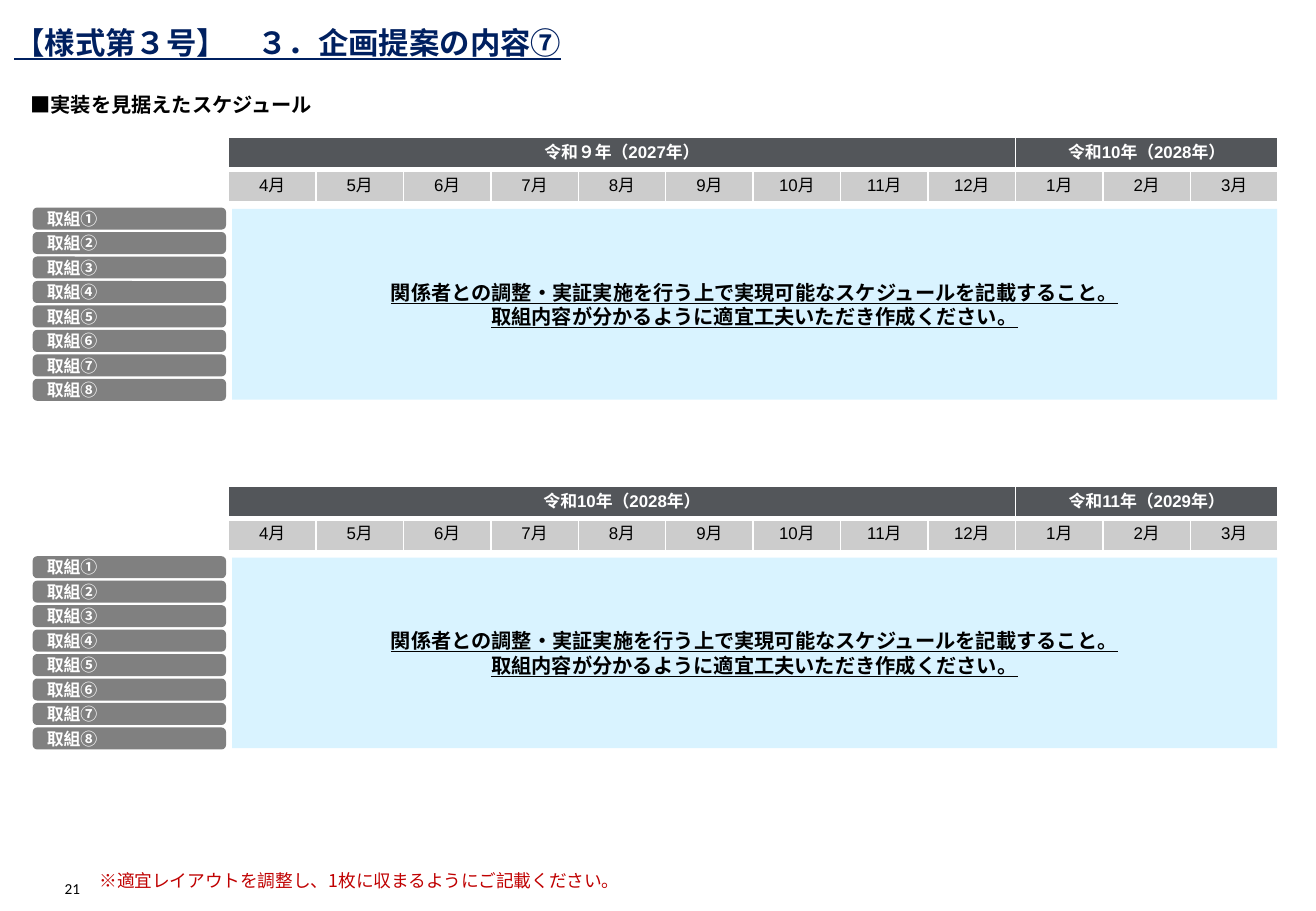
from lxml import etree
from pptx import Presentation, util as u
from pptx.dml.color import RGBColor
from pptx.enum import shapes, text
from pptx.oxml import ns

GOTHIC = "Noto Sans CJK JP"
LATIN = "Arial"
WHITE, BLACK, NAVY, RED = "FFFFFF", "000000", "002060", "C00000"
HEADER, MONTH, PLAN, TASK = "53565A", "CCCCCC", "D9F3FF", "808080"

MONTHS = [4, 5, 6, 7, 8, 9, 10, 11, 12, 1, 2, 3]
MONTHS_BEFORE_NEW_YEAR = 9
TASKS = "①②③④⑤⑥⑦⑧"
GUIDANCE = [
    "関係者との調整・実証実施を行う上で実現可能なスケジュールを記載すること。",
    "取組内容が分かるように適宜工夫いただき作成ください。",
]


def colour(value):
    return RGBColor.from_string(value)


def inches(*lengths):
    return [u.Inches(length) for length in lengths]


def write(frame, lines, size, font=GOTHIC, color=BLACK, bold=False, underline=False,
          align=text.PP_ALIGN.LEFT, anchor=text.MSO_ANCHOR.TOP, spacing=None, insets=None,
          wrap=True):
    """Fill a text frame or table cell, one paragraph per line."""
    lines = [lines] if isinstance(lines, str) else lines
    frame.vertical_anchor = anchor
    if insets:
        (frame.margin_left, frame.margin_top,
         frame.margin_right, frame.margin_bottom) = inches(*insets)
    body = getattr(frame, "text_frame", frame)
    if body is frame:
        body.word_wrap = wrap
    for index, line in enumerate(lines):
        paragraph = body.add_paragraph() if index else body.paragraphs[0]
        paragraph.alignment = align
        paragraph.line_spacing = spacing
        run = paragraph.add_run()
        run.text = line
        run.font.name = font
        run.font.size = u.Pt(size)
        run.font.bold = bold
        run.font.underline = underline
        run.font.color.rgb = colour(color)
        east_asian = etree.SubElement(run.font._element, ns.qn("a:ea"))
        east_asian.set("typeface", GOTHIC)


def text_box(slide, box, lines, **style):
    shape = slide.shapes.add_textbox(*inches(*box))
    write(shape.text_frame, lines, **style)


def block(parent, kind, box, fill, lines, line=None, **style):
    shape = parent.shapes.add_shape(kind, *inches(*box))
    shape.shadow.inherit = False
    shape.fill.solid()
    shape.fill.fore_color.rgb = colour(fill)
    if line:
        shape.line.color.rgb = colour(line)
        shape.line.width = u.Pt(1.5)
    else:
        shape.line.fill.background()
    write(shape.text_frame, lines, anchor=text.MSO_ANCHOR.MIDDLE, bold=True, **style)


def border(cell, **widths):
    """Draw white cell edges; widths in points by side (L, R, T, B)."""
    properties = cell._tc.get_or_add_tcPr()
    for index, side in enumerate("LRTB"):
        edge = etree.Element(ns.qn(f"a:ln{side}"), w=str(u.Pt(widths.get(side, 1))))
        fill = etree.SubElement(edge, ns.qn("a:solidFill"))
        etree.SubElement(fill, ns.qn("a:srgbClr"), val=WHITE)
        properties.insert(index, edge)


def calendar(slide, box, years):
    """Two header rows: fiscal year halves above twelve months."""
    table = slide.shapes.add_table(2, len(MONTHS), *inches(*box)).table
    table.first_row = table.horz_banding = False
    for column in table.columns:
        column.width = u.Inches(box[2] / len(MONTHS))
    for row in table.rows:
        row.height = u.Inches(box[3] / 2)

    for index in range(len(MONTHS)):
        for row, fill, thick_side in ((0, HEADER, "B"), (1, MONTH, "T")):
            cell = table.cell(row, index)
            cell.fill.solid()
            cell.fill.fore_color.rgb = colour(fill)
            border(cell, **{thick_side: 3})

    style = dict(size=10, font=LATIN, align=text.PP_ALIGN.CENTER,
                 anchor=text.MSO_ANCHOR.MIDDLE, spacing=u.Pt(12))
    spans = ((0, MONTHS_BEFORE_NEW_YEAR), (MONTHS_BEFORE_NEW_YEAR, len(MONTHS)))
    for year, (start, end) in zip(years, spans):
        cell = table.cell(0, start)
        cell.merge(table.cell(0, end - 1))
        write(cell, year, color=WHITE, bold=True, **style)
    for index, month in enumerate(MONTHS):
        write(table.cell(1, index), f"{month}月", **style)


def task_labels(slide, box):
    left, top, width, height = box
    label_height = 0.16
    pitch = (height - label_height) / (len(TASKS) - 1)
    group = slide.shapes.add_group_shape()
    for index, number in enumerate(TASKS):
        block(group, shapes.MSO_SHAPE.ROUNDED_RECTANGLE,
              (left, top + index * pitch, width, label_height), TASK,
              f"取組{number}", line=TASK, size=10, color=WHITE)


def schedule(slide, box, years):
    """One fiscal year: calendar header, task labels and planning area."""
    left, top, width, height = box
    header_left, header_height, gap = 1.6, 0.53, 0.06
    body_top = top + header_height + gap
    body_height = height - header_height - gap
    calendar(slide, (left + header_left, top, width - header_left, header_height), years)
    plan_left = header_left + 0.03
    block(slide, shapes.MSO_SHAPE.RECTANGLE,
          (left + plan_left, body_top, width - plan_left - 0.01, body_height), PLAN,
          GUIDANCE, size=12, font=LATIN, underline=True,
          align=text.PP_ALIGN.CENTER, insets=(0, 0, 0, 0))
    task_labels(slide, (left, body_top, 1.57, body_height))


def headings(slide):
    text_box(slide, (0.02, 0, 5.37, 0.51), "【様式第３号】　３．企画提案の内容⑦",
             size=18, color=NAVY, bold=True, underline=True, spacing=1.5)
    text_box(slide, (0.17, 0.74, 3.52, 0.24), "■実装を見据えたスケジュール",
             size=12, bold=True, insets=(0.08, 0.02, 0.08, 0.02))


def footer(slide):
    text_box(slide, (0.46, 7.2, 0.2, 0.19), "21", size=9, font="Calibri",
             align=text.PP_ALIGN.RIGHT, anchor=text.MSO_ANCHOR.BOTTOM,
             insets=(0, 0, 0, 0), wrap=False)
    text_box(slide, (0.82, 7.02, 9.8, 0.47),
             "※適宜レイアウトを調整し、1枚に収まるようにご記載ください。",
             size=10.5, color=RED, anchor=text.MSO_ANCHOR.MIDDLE,
             spacing=u.Pt(12), insets=(0, 0, 0, 0))


def main():
    presentation = Presentation()
    presentation.slide_width, presentation.slide_height = inches(10.83, 7.5)
    slide = presentation.slides.add_slide(presentation.slide_layouts[6])
    headings(slide)
    schedule(slide, (0.28, 1.13, 10.24, 2.16), ("令和９年（2027年）", "令和10年（2028年）"))
    schedule(slide, (0.28, 4, 10.24, 2.16), ("令和10年（2028年）", "令和11年（2029年）"))
    footer(slide)
    presentation.save("out.pptx")


if __name__ == "__main__":
    main()
